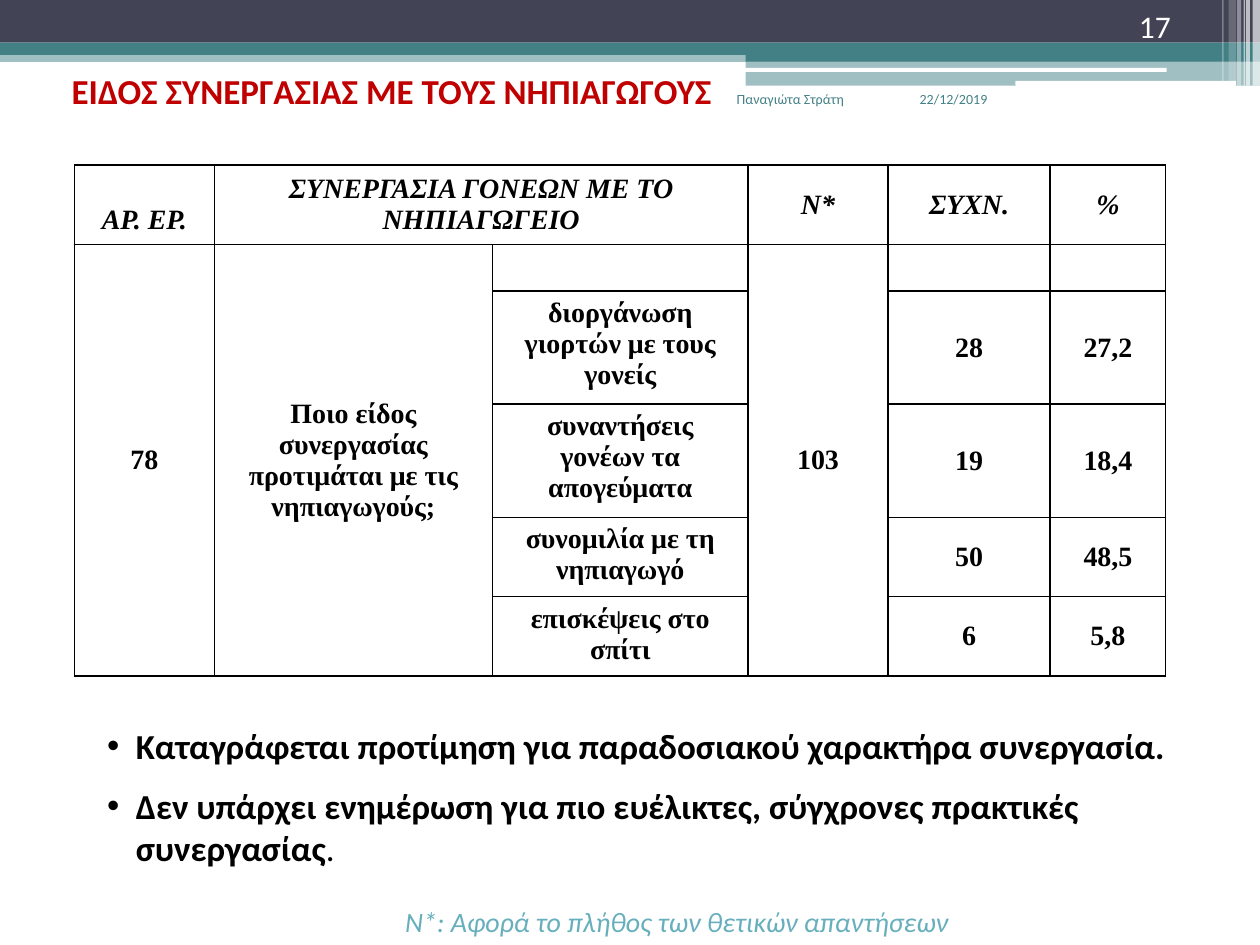
from lxml.etree import SubElement
from pptx import Presentation
from pptx.dml.color import RGBColor
from pptx.enum.shapes import MSO_SHAPE
from pptx.enum.text import MSO_ANCHOR, MSO_AUTO_SIZE, PP_ALIGN
from pptx.oxml.ns import qn
from pptx.util import Cm, Pt

NAVY = RGBColor(0x42, 0x44, 0x56)
TEAL = RGBColor(0x43, 0x80, 0x86)
AQUA = RGBColor(0x67, 0xAF, 0xBD)
RED = RGBColor(0xC0, 0x00, 0x00)
BLACK = RGBColor(0, 0, 0)
WHITE = RGBColor(255, 255, 255)

RECT = MSO_SHAPE.RECTANGLE
ROUND = MSO_SHAPE.ROUNDED_RECTANGLE

SMALL = {"name": "Calibri", "size": Pt(8)}
PAGE = {"name": "Calibri", "size": Pt(18)}
HEAD = {"name": "Calibri", "size": Pt(20), "bold": True}
PLAIN = {"name": "Calibri", "size": Pt(20), "bold": False}
NOTE = {"name": "Calibri", "size": Pt(16), "italic": True}
CELL = {"name": "Times New Roman", "size": Pt(16), "bold": True}
TOP = {**CELL, "italic": True}

BANDS = [
    (RECT, 0, 1.02, 25.4, 0.23, TEAL, 50),
    (RECT, 0, 0, 25.4, 0.86, NAVY, 100),
    (RECT, 0, 0.86, 25.4, 0.25, TEAL, 100),
    (RECT, 15.03, 0.99, 10.37, 0.25, TEAL, 100),
    (RECT, 15.03, 1.23, 10.37, 0.5, TEAL, 50),
    (ROUND, 15.01, 1.37, 8.51, 0.08, WHITE, 100),
    (ROUND, 20.47, 1.63, 4.45, 0.1, WHITE, 100),
]
STRIPES = [
    (25.25, 0.15, 1.73, 65),
    (25.12, 0.08, 1.73, 65),
    (25.07, 0.03, 1.73, 60),
    (24.94, 0.08, 1.73, 40),
    (24.77, 0.15, 1.63, 20),
    (24.64, 0.03, 1.63, 30),
]
COLS = [2.82, 5.61, 5.15, 2.82, 3.27, 2.33]
ROWS = [1.6, 0.94, 2.28, 2.28, 1.6, 1.6]
DATA = [
    ["ΑΡ. ΕΡ.", "ΣΥΝΕΡΓΑΣΙΑ ΓΟΝΕΩΝ ΜΕ ΤΟ ΝΗΠΙΑΓΩΓΕΙΟ", "", "Ν*", "ΣΥΧΝ.", "%"],
    ["78", "Ποιο είδος συνεργασίας προτιμάται με τις νηπιαγωγούς;", "", "103", "", ""],
    ["", "", "διοργάνωση γιορτών με τους γονείς", "", "28", "27,2"],
    ["", "", "συναντήσεις γονέων τα απογεύματα", "", "19", "18,4"],
    ["", "", "συνομιλία με τη νηπιαγωγό", "", "50", "48,5"],
    ["", "", "επισκέψεις στο σπίτι", "", "6", "5,8"],
]
SPANS = [(0, 1, 0, 2), (1, 0, 5, 0), (1, 1, 5, 1), (1, 3, 5, 3)]
POINTS = [
    [("Καταγράφεται προτίμηση για παραδοσιακού χαρακτήρα συνεργασία.", HEAD)],
    [
        ("Δεν υπάρχει ενημέρωση για πιο ευέλικτες, σύγχρονες πρακτικές συνεργασίας", HEAD),
        (".", PLAIN),
    ],
]


class Deck:
    def __init__(self):
        self.show = Presentation()
        self.show.slide_width, self.show.slide_height = Cm(25.4), Cm(19.05)
        self.page = self.show.slides.add_slide(self.show.slide_layouts[5])

    def words(self, para, text, form, color):
        run = para.add_run()
        run.text = text
        for key, value in form.items():
            setattr(run.font, key, value)
        run.font.color.rgb = color

    def band(self, kind, left, top, wide, high, color, alpha):
        shape = self.page.shapes.add_shape(kind, Cm(left), Cm(top), Cm(wide), Cm(high))
        shape.shadow.inherit = False
        shape.line.fill.background()
        shape.fill.solid()
        shape.fill.fore_color.rgb = color
        if alpha < 100:
            tint = shape._element.spPr.find(".//" + qn("a:srgbClr"))
            SubElement(tint, qn("a:alpha"), val=str(alpha * 1000))

    def title(self, text, left, top, wide, high):
        box = self.page.shapes.title
        place = {"left": left, "top": top, "width": wide, "height": high}
        for key, value in place.items():
            setattr(box, key, Cm(value))
        frame = box.text_frame
        frame.auto_size = MSO_AUTO_SIZE.NONE
        frame.vertical_anchor = MSO_ANCHOR.MIDDLE
        frame.paragraphs[0].alignment = PP_ALIGN.LEFT
        self.words(frame.paragraphs[0], text, HEAD, RED)
        self.page.shapes._spTree.append(box._element)

    def frame(self, left, top, wide, high, anchor):
        box = self.page.shapes.add_textbox(Cm(left), Cm(top), Cm(wide), Cm(high))
        box.text_frame.word_wrap = True
        box.text_frame.vertical_anchor = anchor
        return box.text_frame

    def label(self, text, left, top, wide, high, form, color, anchor=MSO_ANCHOR.TOP):
        frame = self.frame(left, top, wide, high, anchor)
        self.words(frame.paragraphs[0], text, form, color)

    def points(self, items, left, top, wide, high):
        frame = self.frame(left, top, wide, high, MSO_ANCHOR.TOP)
        frame.margin_top = Cm(1.27)
        for rank, item in enumerate(items):
            para = frame.add_paragraph() if rank else frame.paragraphs[0]
            para.space_after = Pt(10)
            props = para._p.get_or_add_pPr()
            props.set("marL", str(Cm(0.58)))
            props.set("indent", str(-Cm(0.58)))
            SubElement(props, qn("a:buFont"), typeface="Arial")
            SubElement(props, qn("a:buChar"), char="•")
            for text, form in item:
                self.words(para, text, form, BLACK)

    def border(self, cell):
        props = cell._tc.get_or_add_tcPr()
        for side in ("lnL", "lnR", "lnT", "lnB"):
            line = SubElement(props, qn("a:" + side), w=str(Pt(1)))
            fill = SubElement(line, qn("a:solidFill"))
            SubElement(fill, qn("a:srgbClr"), val=str(BLACK))

    def table(self, left, top):
        grid = self.page.shapes.add_table(
            len(ROWS), len(COLS), Cm(left), Cm(top), Cm(sum(COLS)), Cm(sum(ROWS))
        ).table
        grid.first_row = grid.horz_banding = False
        for col, wide in zip(grid.columns, COLS):
            col.width = Cm(wide)
        for row, high in zip(grid.rows, ROWS):
            row.height = Cm(high)
        for r, line in enumerate(DATA):
            for c, text in enumerate(line):
                cell = grid.cell(r, c)
                self.border(cell)
                cell.fill.background()
                cell.margin_top = cell.margin_bottom = Cm(0.13 if text else 0)
                cell.vertical_anchor = MSO_ANCHOR.TOP if c == 2 else MSO_ANCHOR.MIDDLE
                if text:
                    para = cell.text_frame.paragraphs[0]
                    para.alignment = PP_ALIGN.CENTER
                    self.words(para, text, CELL if r else TOP, BLACK)
        grid.cell(0, 0).margin_top = Cm(0.76)
        for r, c, low, far in SPANS:
            grid.cell(r, c).merge(grid.cell(low, far))


def main():
    deck = Deck()
    for band in BANDS:
        deck.band(*band)
    for left, wide, high, alpha in STRIPES:
        deck.band(RECT, left, 0, wide, high, WHITE, alpha)
    deck.label("22/12/2019", 18.29, 1.7, 2.67, 1.27, SMALL, TEAL)
    deck.label("Παναγιώτα Στράτη", 14.6, 1.7, 3.69, 1.27, SMALL, TEAL)
    deck.label("17", 22.71, 0, 2.11, 1.02, PAGE, WHITE, MSO_ANCHOR.BOTTOM)
    deck.title("ΕΙΔΟΣ ΣΥΝΕΡΓΑΣΙΑΣ ΜΕ ΤΟΥΣ ΝΗΠΙΑΓΩΓΟΥΣ", 1.19, 1.27, 17.25, 1.12)
    deck.table(1.5, 3.33)
    deck.label(
        "Ν*: Αφορά το πλήθος των θετικών απαντήσεων",
        7.92, 18.11, 15.21, 0.94, NOTE, AQUA, MSO_ANCHOR.MIDDLE,
    )
    deck.points(POINTS, 1.91, 13.34, 22.71, 4.45)
    deck.show.save("out.pptx")


if __name__ == "__main__":
    main()
